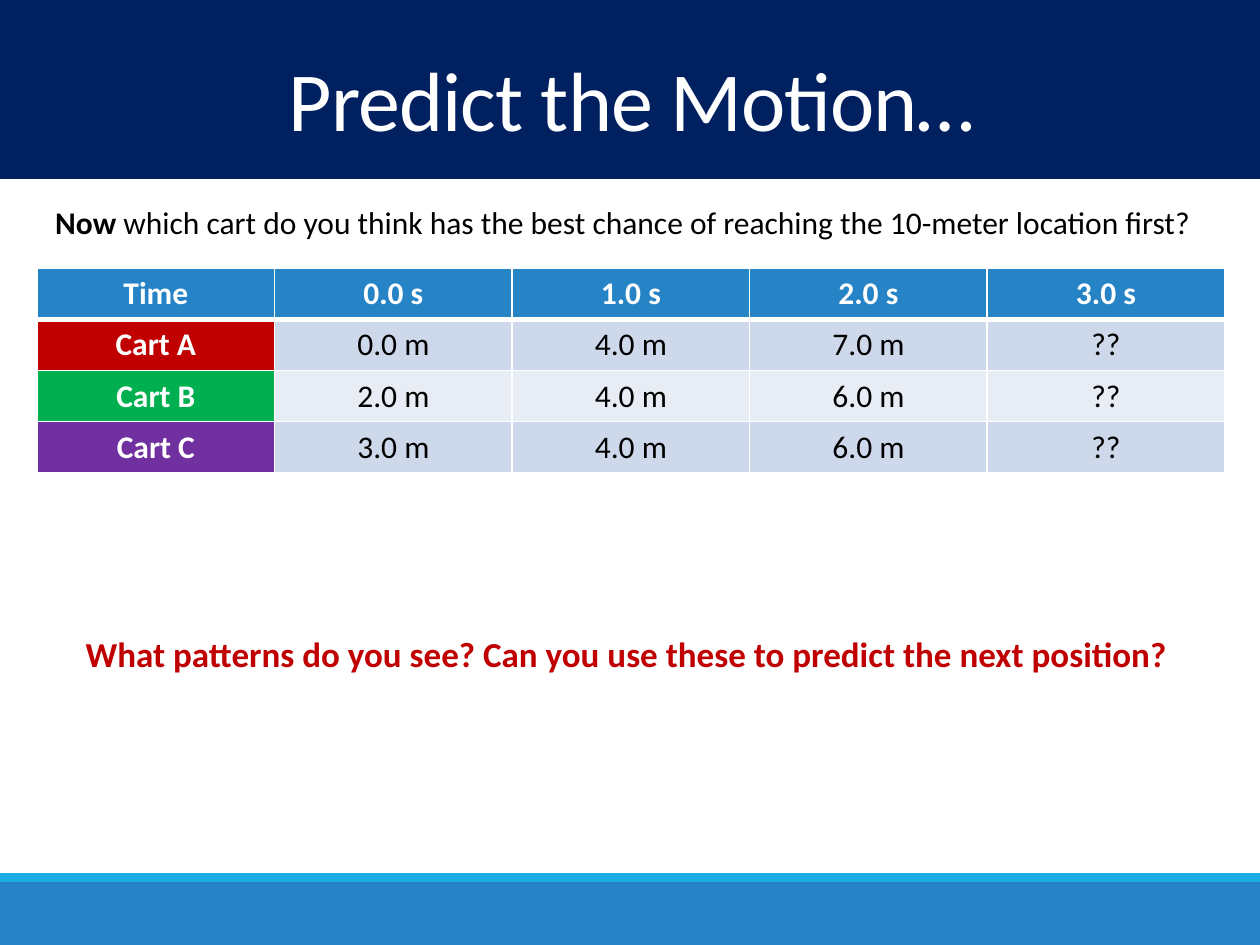
from lxml import etree
from pptx import Presentation
from pptx.dml import color
from pptx.enum import shapes, text
from pptx.oxml import ns
from pptx.util import Pt

WHITE, BLACK, NAVY, BLUE, CYAN = "FFFFFF", "000000", "002060", "2683C6", "1CADE4"
RED, GREEN, PURPLE = "C00000", "00B050", "7030A0"
BANDS = ["CDD9EA", "E8EDF5"]

TABLE_ROWS = [
    ["Time", "0.0 s", "1.0 s", "2.0 s", "3.0 s"],
    ["Cart A", "0.0 m", "4.0 m", "7.0 m", "??"],
    ["Cart B", "2.0 m", "4.0 m", "6.0 m", "??"],
    ["Cart C", "3.0 m", "4.0 m", "6.0 m", "??"],
]
LABEL_FILLS = [BLUE, RED, GREEN, PURPLE]


def rgb(value):
    return color.RGBColor.from_string(value)


def apply_format(target, values):
    for name, value in values.items():
        setattr(target, name, value)


class SlideBuilder:
    """Holds the text style and the current slide."""

    font_name = "Calibri"

    def __init__(self, slide):
        self.slide = slide

    def band(self, top, height, fill):
        """Add a filled bar over the full slide width."""
        shape = self.slide.shapes.add_shape(
            shapes.MSO_SHAPE.RECTANGLE, 0, Pt(top), Pt(720), Pt(height))
        shape.shadow.inherit = False
        shape.fill.solid()
        shape.fill.fore_color.rgb = rgb(fill)
        shape.line.fill.background()

    def run(self, paragraph, words, size, ink, bold=False):
        run = paragraph.add_run()
        run.text = words
        apply_format(run.font, {"name": self.font_name, "size": Pt(size), "bold": bold})
        run.font.color.rgb = rgb(ink)
        return run

    def text_box(self, left, top, width, height, **frame_format):
        """Add a text box and return its first paragraph."""
        box = self.slide.shapes.add_textbox(Pt(left), Pt(top), Pt(width), Pt(height))
        apply_format(box.text_frame, frame_format)
        return box.text_frame.paragraphs[0]

    def title(self, words):
        paragraph = self.text_box(2, 30.2, 718, 60.5, word_wrap=True,
                                  vertical_anchor=text.MSO_ANCHOR.MIDDLE)
        apply_format(paragraph, {"alignment": text.PP_ALIGN.CENTER, "line_spacing": 0.85})
        run = self.run(paragraph, words, 48, WHITE)
        run.font._element.set("spc", "-50")

    def question(self, left, top, width, height, size, ink, parts):
        """Add one unwrapped line; parts are pairs of words and bold."""
        paragraph = self.text_box(left, top, width, height, word_wrap=False,
                                  auto_size=text.MSO_AUTO_SIZE.SHAPE_TO_FIT_TEXT)
        for words, bold in parts:
            self.run(paragraph, words, size, ink, bold)

    def cell_borders(self, cell, widths):
        properties = cell._tc.get_or_add_tcPr()
        for index, (side, width) in enumerate(widths.items()):
            line = etree.Element(ns.qn(f"a:ln{side}"), w=str(Pt(width)))
            fill = etree.SubElement(line, ns.qn("a:solidFill"))
            etree.SubElement(fill, ns.qn("a:srgbClr"), val=WHITE)
            properties.insert(index, line)

    def table(self, left, top, column_width, row_height, rows):
        count, columns = len(rows), len(rows[0])
        table = self.slide.shapes.add_table(
            count, columns, Pt(left), Pt(top),
            Pt(column_width * columns), Pt(row_height * count)).table
        for r, row in enumerate(rows):
            for c, words in enumerate(row):
                cell = table.cell(r, c)
                is_label = r == 0 or c == 0
                cell.vertical_anchor = text.MSO_ANCHOR.MIDDLE
                cell.fill.solid()
                cell.fill.fore_color.rgb = rgb(LABEL_FILLS[r] if is_label else BANDS[(r - 1) % 2])
                paragraph = cell.text_frame.paragraphs[0]
                paragraph.alignment = text.PP_ALIGN.CENTER
                self.run(paragraph, words, 18, WHITE if is_label else BLACK, is_label)
                self.cell_borders(cell, {"L": 1, "R": 1, "T": 3 if r == 1 else 1,
                                         "B": 3 if r == 0 else 1})


def main():
    presentation = Presentation()
    apply_format(presentation, {"slide_width": Pt(720), "slide_height": Pt(540)})
    builder = SlideBuilder(presentation.slides.add_slide(presentation.slide_layouts[6]))

    builder.band(504, 36, BLUE)
    builder.band(499, 5, CYAN)
    builder.band(0, 102.2, NAVY)
    builder.title("Predict the Motion…")
    builder.question(24.5, 112.5, 670, 29, 18, BLACK, [
        ("Now", True),
        (" which cart do you think has the best chance of reaching the 10-meter location first?",
         False)])
    builder.question(41.8, 358, 638, 31.5, 20, RED, [
        ("What patterns do you see? Can you use these to predict the next position?", True)])
    builder.table(21.2, 153.4, 135.75, 29.2, TABLE_ROWS)

    presentation.save("out.pptx")


if __name__ == "__main__":
    main()
